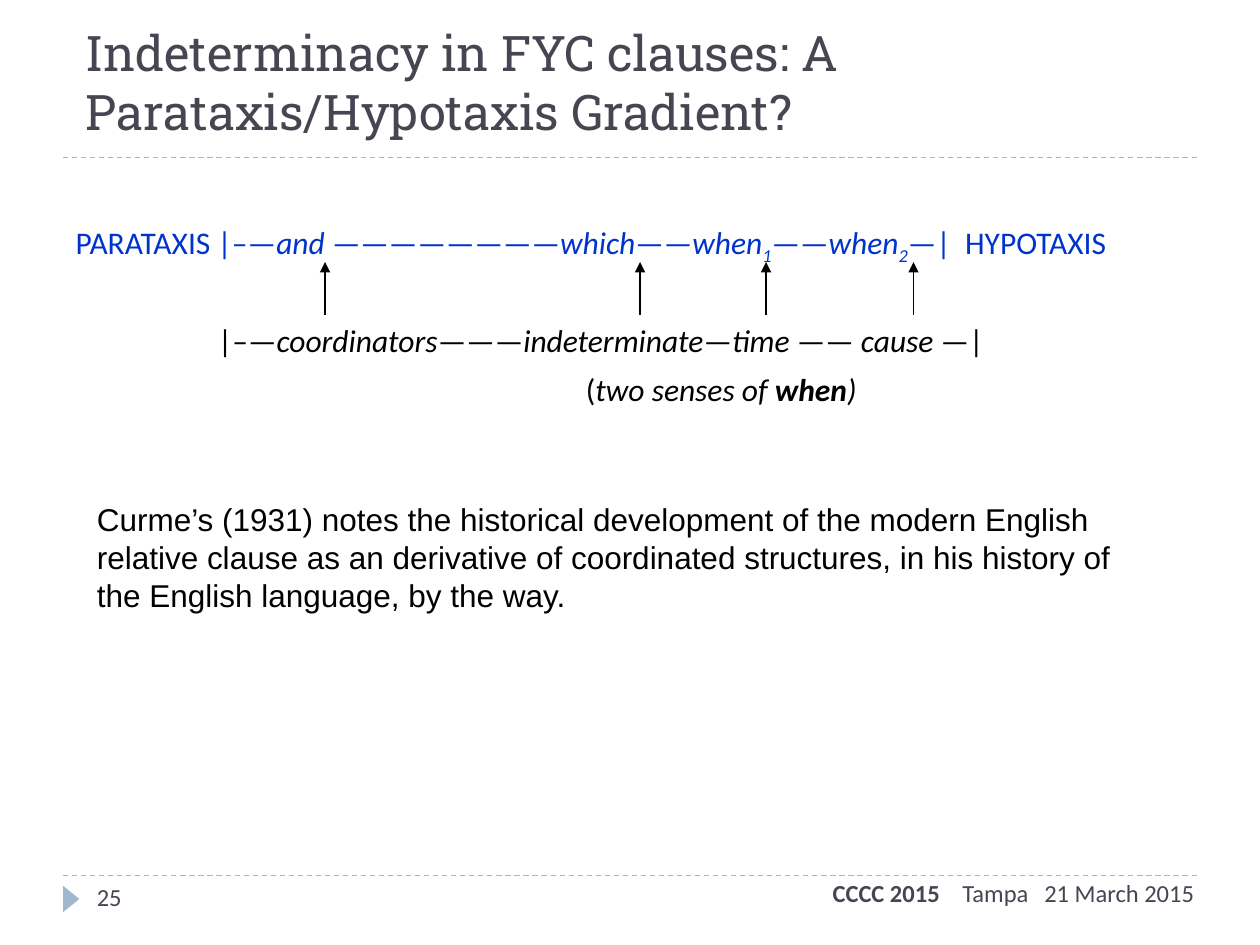
from dataclasses import dataclass

from lxml import etree
from pptx import Presentation
from pptx import util as u
from pptx.dml import color
from pptx.enum import dml, shapes, text
from pptx.oxml import ns

INK = "464653"
ACCENT = "9FB8CD"
BLUE = "0033CC"
BLACK = "000000"
BODY_FONT = "Calibri"


@dataclass
class Span:
    text: str
    italic: bool = False
    bold: bool = False
    subscript: bool = False


@dataclass
class Block:
    left: float
    top: float
    width: float
    height: float
    size: int
    hue: str
    spans: list[Span]
    font: str = BODY_FONT
    inset_x: float = 0.1
    inset_y: float = 0.05
    anchor: text.MSO_ANCHOR = text.MSO_ANCHOR.TOP
    tabs: tuple[float, ...] = ()


@dataclass
class Rule:
    start: tuple[float, float]
    end: tuple[float, float]
    hue: str
    dashed: bool = False
    arrow: bool = False


def rgb(value: str) -> color.RGBColor:
    return color.RGBColor.from_string(value)


def add_block(page, block: Block) -> None:
    box = page.shapes.add_textbox(
        u.Inches(block.left), u.Inches(block.top),
        u.Inches(block.width), u.Inches(block.height),
    )
    frame = box.text_frame
    frame.word_wrap = True
    frame.vertical_anchor = block.anchor
    frame.margin_left = frame.margin_right = u.Inches(block.inset_x)
    frame.margin_top = frame.margin_bottom = u.Inches(block.inset_y)
    para = frame.paragraphs[0]
    if block.tabs:
        stops = etree.SubElement(para._p.get_or_add_pPr(), ns.qn("a:tabLst"))
        for position in block.tabs:
            etree.SubElement(stops, ns.qn("a:tab"), pos=str(u.Inches(position)), algn="l")
    for span in block.spans:
        run = para.add_run()
        run.text = span.text
        run.font.name = block.font
        run.font.size = u.Pt(block.size)
        run.font.color.rgb = rgb(block.hue)
        run.font.italic = span.italic
        run.font.bold = span.bold
        if span.subscript:
            run.font._element.set("baseline", "-25000")


def add_rule(page, rule: Rule) -> None:
    points = (u.Inches(value) for value in rule.start + rule.end)
    connector = page.shapes.add_connector(shapes.MSO_CONNECTOR.STRAIGHT, *points)
    connector.line.color.rgb = rgb(rule.hue)
    connector.line.width = u.Pt(0.75)
    if rule.dashed:
        connector.line.dash_style = dml.MSO_LINE.DASH
    if rule.arrow:
        etree.SubElement(connector.line._get_or_add_ln(), ns.qn("a:tailEnd"), type="triangle")
    etree.SubElement(connector._element.spPr, ns.qn("a:effectLst"))


def add_page_marker(page) -> None:
    marker = page.shapes.add_shape(
        shapes.MSO_SHAPE.ISOSCELES_TRIANGLE,
        u.Inches(0.46), u.Inches(7.07), u.Inches(0.21), u.Inches(0.13),
    )
    marker.rotation = 90
    marker.shadow.inherit = False
    marker.fill.solid()
    marker.fill.fore_color.rgb = rgb(ACCENT)
    marker.line.fill.background()


def gradient_line(left: float, row: int, hue: str, spans: list[Span]) -> Block:
    return Block(left, 1.77 + 0.39 * row, 9.5 - left, 0.31, 18, hue, spans,
                 inset_x=0, inset_y=0)


def main() -> None:
    deck = Presentation()
    deck.slide_width, deck.slide_height = u.Inches(10), u.Inches(7.5)
    page = deck.slides.add_slide(deck.slide_layouts[6])

    for y in (6.95, 1.25):
        add_rule(page, Rule((0.5, y), (9.5, y), ACCENT, dashed=True))
    add_page_marker(page)

    blocks = [
        Block(0.67, 6.95, 2.17, 0.4, 14, INK, [Span("25")]),
        Block(0.58, 0.08, 9, 1.08, 28, INK,
              [Span("Indeterminacy in FYC clauses: A Parataxis/Hypotaxis Gradient?")],
              font="Roboto Slab", anchor=text.MSO_ANCHOR.BOTTOM),
        gradient_line(0.6, 0, BLUE, [
            Span("PARATAXIS |–—"), Span("and ", italic=True), Span("————————"),
            Span("which", italic=True), Span("——"),
            Span("when", italic=True), Span("1", italic=True, subscript=True), Span("——"),
            Span("when", italic=True), Span("2", italic=True, subscript=True),
            Span("—|  HYPOTAXIS"),
        ]),
        gradient_line(1.73, 2, BLACK, [
            Span("|–—"), Span("coordinators", italic=True), Span("———"),
            Span("indeterminate", italic=True), Span("—"),
            Span("time ", italic=True), Span("—— "),
            Span("cause ", italic=True), Span("—|"),
        ]),
        gradient_line(4.65, 3, BLACK, [
            Span("("), Span("two senses of ", italic=True),
            Span("when", italic=True, bold=True), Span(")", italic=True),
        ]),
        Block(6.51, 6.92, 3.2, 0.4, 14, INK,
              [Span("CCCC 2015", bold=True), Span("\tTampa\t21 March 2015")],
              tabs=(1.03, 1.68)),
        Block(0.67, 3.92, 8.58, 1, 18, BLACK,
              [Span("Curme’s (1931) notes the historical development of the modern English "
                    "relative clause as an derivative of coordinated structures, in his "
                    "history of the English language, by the way.")],
              font="Arial"),
    ]
    for block in blocks:
        add_block(page, block)

    for x in (2.58, 5.08, 6.08, 7.25):
        add_rule(page, Rule((x, 2.5), (x, 2.08), BLACK, arrow=True))

    deck.save("out.pptx")


if __name__ == "__main__":
    main()
